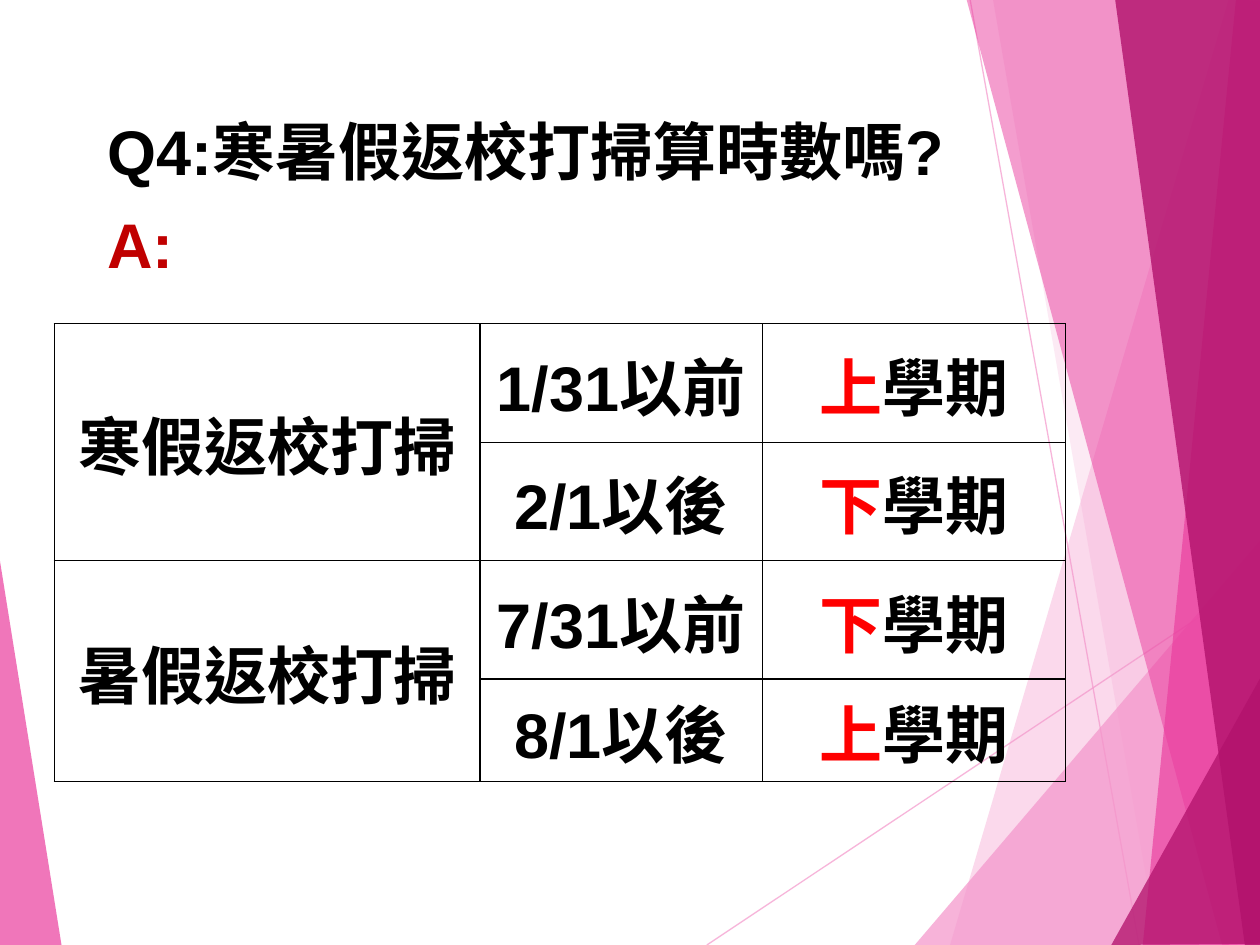
from dataclasses import dataclass

import lxml.etree
import pptx
import pptx.dml.color
import pptx.enum.shapes
import pptx.enum.text
import pptx.oxml.ns
import pptx.util

SCALE = pptx.util.Inches(1) // 100  # 100 px to the inch
CENTER = pptx.enum.text.PP_ALIGN.CENTER
LEFT = pptx.enum.text.PP_ALIGN.LEFT


@dataclass(frozen=True)
class Theme:
    font: str = "Arial"
    size: int = 36
    line: float = 0.75
    ink: str = "000000"
    answer: str = "C00000"
    accent: str = "FF0000"
    pale: str = "F496CB"
    pink: str = "EA3C9E"
    deep: str = "B2126C"


THEME = Theme()


@dataclass(frozen=True)
class Ray:
    start: tuple[int, int]
    end: tuple[int, int]


@dataclass(frozen=True)
class Facet:
    color: str
    opacity: int
    points: tuple[tuple[int, int], ...]


@dataclass(frozen=True)
class Vacation:
    name: str
    periods: tuple[tuple[str, str], ...]


RAYS = (Ray((561, 750), (1001, 457)), Ray((770, 0), (904, 750)))
FACETS = (
    Facet(THEME.pale, 36, ((975, 0), (754, 750), (1002, 751), (1001, 1))),
    Facet(THEME.pale, 20, ((788, -1), (919, 750), (1001, 750), (1001, -1))),
    Facet(THEME.pale, 72, ((726, 750), (1000, 429), (1001, 750))),
    Facet(THEME.pink, 50, ((767, -1), (970, 750), (1001, 749), (1001, -1))),
    Facet(THEME.pink, 66, ((981, -1), (907, 750), (1001, 750), (1000, -1))),
    Facet(THEME.deep, 80, ((885, -1), (988, 750), (1002, 750), (1000, -1))),
    Facet(THEME.deep, 76, ((882, 750), (1002, 535), (1002, 749))),
    Facet(THEME.pink, 70, ((-1, 439), (49, 751), (-1, 750))),
)
VACATIONS = (
    Vacation("寒假返校打掃", (("1/31以前", "上"), ("2/1以後", "下"))),
    Vacation("暑假返校打掃", (("7/31以前", "下"), ("8/1以後", "上"))),
)
COLUMNS = (338, 224, 241)
ROWS = (94, 94, 94, 81)


def px(value: int) -> int:
    return pptx.util.Emu(value * SCALE)


def rgb(color: str) -> pptx.dml.color.RGBColor:
    return pptx.dml.color.RGBColor.from_string(color)


def add_child(parent, tag: str, **attributes):
    child = lxml.etree.SubElement(parent, pptx.oxml.ns.qn(tag))
    for name, value in attributes.items():
        child.set(name, str(value))
    return child


def paint(fill, color: str, opacity: int) -> None:
    fill.solid()
    fill.fore_color.rgb = rgb(color)
    srgb = fill._xPr.find(".//" + pptx.oxml.ns.qn("a:srgbClr"))
    add_child(srgb, "a:alpha", val=opacity * 1000)


def add_text(para, text: str, *, color: str = THEME.ink, align=LEFT, before: int = 0) -> None:
    para.alignment = align
    para.space_before = pptx.util.Pt(before)
    span = para.add_run()
    span.text = text
    span.font.name = THEME.font
    span.font.size = pptx.util.Pt(THEME.size)
    span.font.bold = True
    span.font.color.rgb = rgb(color)
    span._r.get_or_add_rPr().set("lang", "zh-TW")


def draw_ray(page, ray: Ray) -> None:
    line = page.shapes.add_connector(
        pptx.enum.shapes.MSO_CONNECTOR.STRAIGHT, *map(px, ray.start + ray.end))
    line.line.width = pptx.util.Pt(THEME.line)
    paint(line.line.fill, THEME.pale, 70)
    add_child(line._element.spPr, "a:effectLst")


def draw_facet(page, facet: Facet) -> None:
    first, *others = facet.points
    builder = page.shapes.build_freeform(*first, scale=SCALE)
    builder.add_line_segments(others, close=True)
    shape = builder.convert_to_shape()
    shape.shadow.inherit = False
    shape.line.fill.background()
    paint(shape.fill, facet.color, facet.opacity)


def draw_question(page) -> None:
    page.shapes._spTree.remove(page.shapes.title._element)
    box = page.placeholders[1]
    box.left, box.top, box.width, box.height = map(px, (75, 84, 815, 157))
    page.shapes._spTree.append(box._element)  # in front of the facets
    frame = box.text_frame
    frame.auto_size = pptx.enum.text.MSO_AUTO_SIZE.NONE
    frame.vertical_anchor = pptx.enum.text.MSO_ANCHOR.TOP
    add_text(frame.paragraphs[0], "Q4:寒暑假返校打掃算時數嗎?")
    add_text(frame.add_paragraph(), "A:", color=THEME.answer, before=10)
    for para in frame.paragraphs:
        properties = para._p.get_or_add_pPr()
        properties.set("marL", "0")
        properties.set("indent", "0")
        add_child(properties, "a:buNone")


def format_cell(cell) -> None:
    """Give the cell thin margins, black borders and no fill."""
    cell.vertical_anchor = pptx.enum.text.MSO_ANCHOR.MIDDLE
    cell.margin_left = cell.margin_top = cell.margin_right = px(1)
    cell.margin_bottom = 0
    properties = cell._tc.get_or_add_tcPr()
    for side in ("a:lnL", "a:lnR", "a:lnT", "a:lnB"):
        border = add_child(properties, side, w=pptx.util.Pt(THEME.line))
        add_child(add_child(border, "a:solidFill"), "a:srgbClr", val=THEME.ink)
    cell.fill.background()


def draw_schedule(page) -> None:
    frame = page.shapes.add_table(
        len(ROWS), len(COLUMNS), px(43), px(257), px(sum(COLUMNS)), px(sum(ROWS)))
    table = frame.table
    table.first_row = table.horz_banding = False
    for column, width in zip(table.columns, COLUMNS):
        column.width = px(width)
    for row, height in zip(table.rows, ROWS):
        row.height = px(height)
    for cell in table.iter_cells():
        format_cell(cell)

    top = 0
    for vacation in VACATIONS:
        bottom = top + len(vacation.periods)
        name_cell = table.cell(top, 0)
        name_cell.merge(table.cell(bottom - 1, 0))
        add_text(name_cell.text_frame.paragraphs[0], vacation.name, align=CENTER)
        for row, (period, term) in enumerate(vacation.periods, top):
            period_para, term_para = (
                table.cell(row, column).text_frame.paragraphs[0] for column in (1, 2))
            add_text(period_para, period, align=CENTER)
            add_text(term_para, term, color=THEME.accent, align=CENTER)
            add_text(term_para, "學期", align=CENTER)
        top = bottom


def main() -> None:
    deck = pptx.Presentation()
    deck.slide_width, deck.slide_height = px(1000), px(750)
    page = deck.slides.add_slide(deck.slide_layouts[1])
    for ray in RAYS:
        draw_ray(page, ray)
    for facet in FACETS:
        draw_facet(page, facet)
    draw_question(page)
    draw_schedule(page)
    deck.save("out.pptx")


if __name__ == "__main__":
    main()
